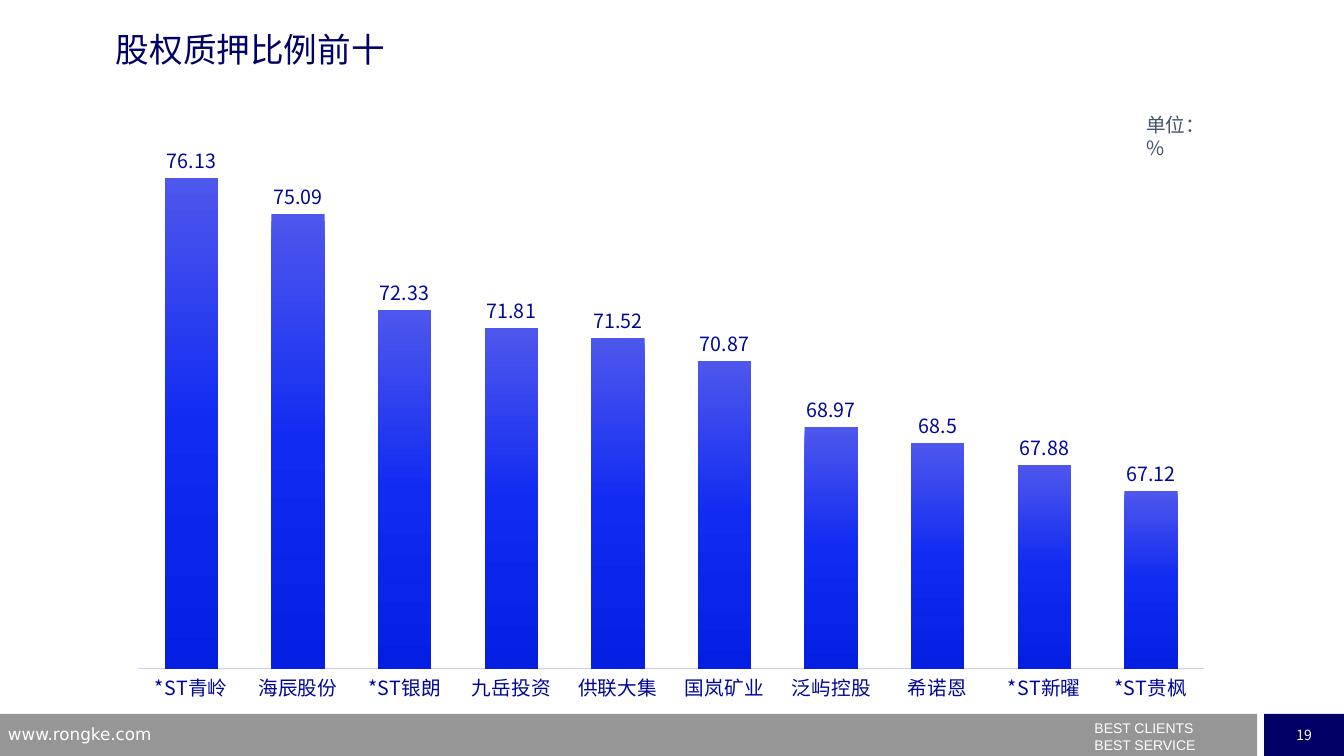
from copy import deepcopy
from dataclasses import dataclass

from lxml import etree
from pptx import Presentation
from pptx.chart.data import CategoryChartData
from pptx.dml.color import RGBColor
from pptx.enum.chart import XL_CHART_TYPE, XL_LABEL_POSITION, XL_TICK_LABEL_POSITION, XL_TICK_MARK
from pptx.enum.shapes import MSO_SHAPE
from pptx.enum.text import MSO_ANCHOR, PP_ALIGN
from pptx.oxml.ns import qn
from pptx.util import Pt

COLUMN = XL_CHART_TYPE.COLUMN_CLUSTERED
OUTSIDE = XL_LABEL_POSITION.OUTSIDE_END
NO_TICK = XL_TICK_MARK.NONE
NO_LABEL = XL_TICK_LABEL_POSITION.NONE
RECT = MSO_SHAPE.RECTANGLE
MIDDLE, TOP = MSO_ANCHOR.MIDDLE, MSO_ANCHOR.TOP
LEFT, CENTER = PP_ALIGN.LEFT, PP_ALIGN.CENTER


@dataclass(frozen=True)
class Theme:
    sans: str = "Noto Sans CJK SC"
    web: str = "DejaVu Sans"
    foot: str = "Arial"
    navy: str = "000066"
    label: str = "000798"
    slate: str = "44546A"
    grey: str = "969696"
    white: str = "FFFFFF"
    axis: str = "C9CCFF"
    bars: tuple = ((0, "4E57EC"), (0.5, "112BF1"), (1, "041EE2"))
    head: int = 24
    body: int = 14
    site: int = 12
    small: int = 10


THEME = Theme()
SHARES = {
    "*ST青岭": 76.13, "海辰股份": 75.09, "*ST银朗": 72.33, "九岳投资": 71.81,
    "供联大集": 71.52, "国岚矿业": 70.87, "泛屿控股": 68.97, "希诺恩": 68.5,
    "*ST新曜": 67.88, "*ST贵枫": 67.12,
}


def style(font, face, size, color):
    font.name, font.size = face, Pt(size)
    font.color.rgb = RGBColor.from_string(color)


def write(shape, text, face, size, color, align=LEFT, anchor=MIDDLE, inset=(0, 0)):
    """Set text with left and right insets in points."""
    frame = shape.text_frame
    frame.text = text
    frame.word_wrap = True
    frame.vertical_anchor = anchor
    frame.margin_top = frame.margin_bottom = 0
    frame.margin_left, frame.margin_right = map(Pt, inset)
    for para in frame.paragraphs:
        para.alignment = align
        for run in para.runs:
            style(run.font, face, size, color)


def add_text(slide, box, *args, **opts):
    write(slide.shapes.add_textbox(*map(Pt, box)), *args, **opts)


def add_bar(slide, box, color):
    bar = slide.shapes.add_shape(RECT, *map(Pt, box))
    bar.shadow.inherit = False
    bar.fill.solid()
    bar.fill.fore_color.rgb = RGBColor.from_string(color)
    bar.line.fill.background()
    return bar


def add_title(slide, box, text):
    title = slide.shapes.title
    title.left, title.top, title.width, title.height = map(Pt, box)
    write(title, text, THEME.sans, THEME.head, THEME.navy)


def add_footer(slide, box, page):
    x, y, wide, high = box
    tab, gap = 57, 5
    add_bar(slide, (x, y, wide - tab - gap, high), THEME.grey)
    tag = add_bar(slide, (x + wide - tab, y, tab, high), THEME.navy)
    write(tag, page, THEME.sans, THEME.small, THEME.white, CENTER)
    add_text(slide, (x + wide - 185.3, y + 3.8, 184.3, 26), "BEST CLIENTS\nBEST SERVICE",
             THEME.foot, THEME.small, THEME.white, anchor=TOP, inset=(7.2, 0))
    add_text(slide, (x - 1.4, y + 4.8, 232, 19), "www.rongke.com",
             THEME.web, THEME.site, THEME.white, inset=(7.2, 0))


def fade(chart, fill):
    """Give the bars a top-to-bottom gradient with the theme's stops."""
    fill.gradient()
    fill.gradient_angle = 270
    stops = next(chart.element.iter(qn("a:gsLst")))
    stops.append(deepcopy(stops[-1]))
    for stop, (pos, color) in zip(fill.gradient_stops, THEME.bars):
        stop.position = pos
        stop.color.rgb = RGBColor.from_string(color)


def fix_plot(chart, **sizes):
    """Pin the inner plot area, as shares of the chart box."""
    area = next(chart.element.iter(qn("c:plotArea")))
    for old in area.findall(qn("c:layout")):
        area.remove(old)
    layout = etree.Element(qn("c:layout"))
    manual = etree.SubElement(layout, qn("c:manualLayout"))
    parts = {"layoutTarget": "inner", "xMode": "edge", "yMode": "edge", **sizes}
    for name, val in parts.items():
        etree.SubElement(manual, qn("c:" + name)).set("val", str(val))
    area.insert(0, layout)


def add_shares(slide, box):
    data = CategoryChartData()
    data.categories = list(SHARES)
    data.add_series("Series 1", list(SHARES.values()))
    chart = slide.shapes.add_chart(COLUMN, *map(Pt, box), data).chart
    chart.has_legend = chart.has_title = False
    style(chart.font, THEME.sans, THEME.body, THEME.label)

    plot = chart.plots[0]
    plot.vary_by_categories = False
    plot.gap_width, plot.overlap = 100, -24
    fade(chart, plot.series[0].format.fill)
    plot.has_data_labels = True
    labels = plot.data_labels
    labels.show_value, labels.position = True, OUTSIDE
    style(labels.font, THEME.sans, THEME.body, THEME.label)

    cats, vals = chart.category_axis, chart.value_axis
    cats.major_tick_mark = cats.minor_tick_mark = NO_TICK
    cats.format.line.width = Pt(0.75)
    cats.format.line.color.rgb = RGBColor.from_string(THEME.axis)
    style(cats.tick_labels.font, THEME.sans, THEME.body, THEME.label)
    vals.minimum_scale, vals.maximum_scale = 62, 78
    vals.has_major_gridlines = False
    vals.tick_label_position = NO_LABEL
    vals.visible = False
    fix_plot(chart, x=0.02, y=0.02, w=0.96, h=0.907)
    return chart


def set_asian(root):
    """Use each Latin typeface for Chinese text as well."""
    for latin in list(root.iter(qn("a:latin"))):
        asian = etree.Element(qn("a:ea"))
        asian.set("typeface", latin.get("typeface"))
        latin.addnext(asian)


def main():
    deck = Presentation()
    deck.slide_width, deck.slide_height = Pt(960), Pt(540)
    slide = deck.slides.add_slide(deck.slide_layouts[5])
    add_footer(slide, (0, 510, 960, 30), "19")
    chart = add_shares(slide, (82.8, 72, 793.4, 437.8))
    add_title(slide, (82.8, 20.2, 648, 30.2), "股权质押比例前十")
    add_text(slide, (818.6, 80.6, 58.3, 17.3), "单位：%", THEME.sans, THEME.body,
             THEME.slate, anchor=TOP, inset=(0, 6))
    set_asian(slide.element)
    set_asian(chart.element)
    deck.save("out.pptx")


if __name__ == "__main__":
    main()
